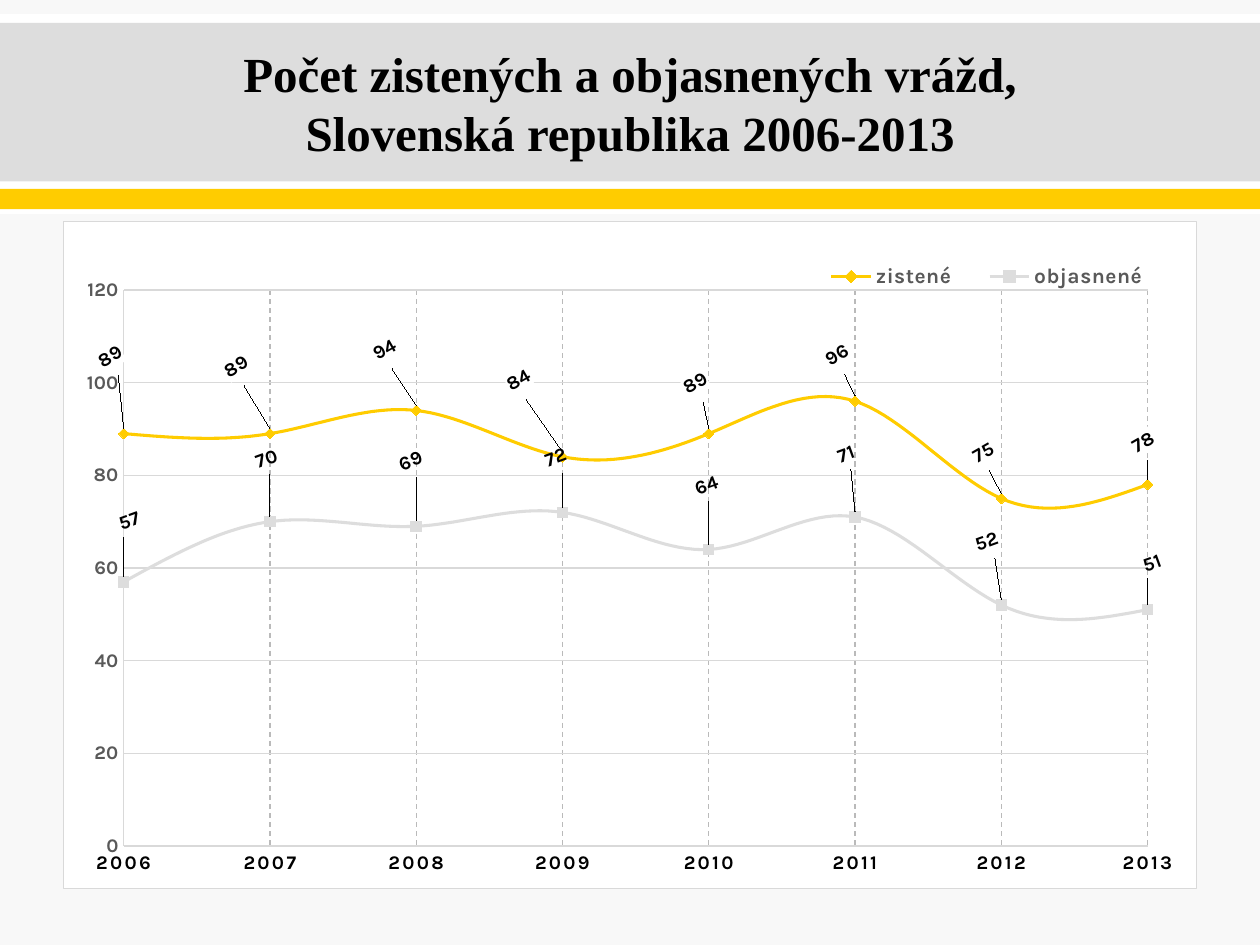
from lxml.etree import SubElement
from pptx import Presentation
from pptx.chart.data import CategoryChartData as Data
from pptx.dml.color import RGBColor
from pptx.enum.chart import XL_CHART_TYPE as Kind, XL_LABEL_POSITION as Place
from pptx.enum.chart import XL_LEGEND_POSITION as Side, XL_MARKER_STYLE as Mark
from pptx.enum.chart import XL_TICK_MARK as Tick
from pptx.enum.dml import MSO_LINE as Dash
from pptx.enum.shapes import MSO_SHAPE as Form
from pptx.enum.text import MSO_ANCHOR as Anchor, PP_ALIGN as Align
from pptx.oxml import parse_xml
from pptx.oxml.ns import nsdecls, qn
from pptx.util import Cm, Pt

BLACK = RGBColor(0x00, 0x00, 0x00)
WHITE = RGBColor(0xFF, 0xFF, 0xFF)
PAPER = RGBColor(0xF8, 0xF8, 0xF8)
SILVER = RGBColor(0xDD, 0xDD, 0xDD)
GOLD = RGBColor(0xFF, 0xCC, 0x00)
TEXT = RGBColor(0x59, 0x59, 0x59)
RULE = RGBColor(0xD9, 0xD9, 0xD9)
GRID = RGBColor(0xBA, 0xBA, 0xBA)

YEARS = [str(year) for year in range(2006, 2014)]
# name, values, colour, marker, label angle, label shifts in % of the chart
LINES = [
    ("zistené", (89, 89, 94, 84, 89, 96, 75, 78), GOLD, Mark.DIAMOND, -30,
     [(-1.2, -7.6), (-3, -6.1), (-2.8, -5.2), (-3.9, -7.5),
      (-1.2, -3.6), (-1.6, -3), (-1.6, -3.1), (-0.4, -2.5)]),
    ("objasnené", (57, 70, 69, 72, 64, 71, 52, 51), SILVER, Mark.SQUARE, -20,
     [(0.5, -5.4), (-0.3, -5.7), (-0.5, -6), (-0.6, -4.5),
      (-0.2, -5.8), (-0.8, -5.8), (-1.3, -5.7), (0.4, -3.3)]),
]


def style(font, size=11, color=BLACK, name="Karla"):
    font.size, font.bold, font.name = Pt(size), True, name
    font.color.rgb = color


def stroke(line, color, width=0.75, dash=None):
    line.color.rgb = color
    line.width = Pt(width)
    if dash:
        line.dash_style = dash


def band(slide, top, height, color):
    """Add a stripe across the full slide width."""
    bar = slide.shapes.add_shape(Form.RECTANGLE, 0, Cm(top), Cm(25.4), Cm(height))
    bar.shadow.inherit = False
    bar.fill.solid()
    bar.fill.fore_color.rgb = color
    bar.line.fill.background()


def write(slide, text, left, top, width, height, **look):
    box = slide.shapes.add_textbox(Cm(left), Cm(top), Cm(width), Cm(height))
    frame = box.text_frame
    frame.word_wrap = True
    frame.vertical_anchor = Anchor.MIDDLE
    para = frame.paragraphs[0]
    para.text = text
    para.alignment = Align.CENTER
    for run in para.runs:
        style(run.font, **look)


def layout(x, y, w=None, h=None, inner=False):
    """Make a manual layout from fractions of the chart."""
    node = parse_xml(f"<c:layout {nsdecls('c')}><c:manualLayout/></c:layout>")
    parts = {"x": x, "y": y}
    if w:
        parts = {"xMode": "edge", "yMode": "edge", **parts, "w": w, "h": h}
    if inner:
        parts = {"layoutTarget": "inner", **parts}
    for tag, val in parts.items():
        SubElement(node[0], qn(f"c:{tag}")).set("val", str(val))
    return node


def solid(line=None):
    """Make a white fill with an optional thin border."""
    fill = f'<a:solidFill><a:srgbClr val="{WHITE}"/></a:solidFill>'
    edge = (f'<a:ln w="{Pt(0.75)}"><a:solidFill><a:srgbClr val="{line}"/>'
            "</a:solidFill></a:ln>") if line else ""
    return parse_xml(f"<c:spPr {nsdecls('c', 'a')}>{fill}{edge}</c:spPr>")


def tag_points(row, angle, shifts, filled):
    """Turn and shift the value label of each point."""
    for i, (x, y) in enumerate(shifts):
        label = row.points[i].data_label
        style(label.font)
        label.position = Place.ABOVE
        node = row._element.xpath(f"c:dLbls/c:dLbl[c:idx/@val='{i}']")[0]
        node.insert(1, layout(round(x / 100, 4), round(y / 100, 4)))
        props = node.find(qn("c:txPr"))
        props.find(qn("a:bodyPr")).set("rot", str(angle * 60000))
        if filled:
            for old in node.findall(qn("c:spPr")):
                node.remove(old)
            props.addprevious(solid())


def trace(row, color, mark):
    row.smooth = True
    stroke(row.format.line, color, 1.75)
    row.marker.style, row.marker.size = mark, 6
    look = row.marker.format
    look.fill.solid()
    look.fill.fore_color.rgb = color
    stroke(look.line, color)


def set_axis(axis, color, grid, dash=None):
    style(axis.tick_labels.font, color=color)
    axis.major_tick_mark = axis.minor_tick_mark = Tick.NONE
    stroke(axis.format.line, RULE)
    axis.has_major_gridlines = True
    stroke(axis.major_gridlines.format.line, grid, dash=dash)


def space(part, gap):
    """Widen the letter spacing of a chart part, in points."""
    for node in part._element.iter(qn("a:defRPr")):
        node.set("spc", str(round(gap * 100)))


def add_graph(slide):
    data = Data()
    data.categories = YEARS
    for name, vals, *_ in LINES:
        data.add_series(name, vals)
    chart = slide.shapes.add_chart(Kind.LINE_MARKERS, Cm(1.27), Cm(4.45),
                                   Cm(22.86), Cm(13.48), data).chart
    chart.has_title = False
    style(chart.font)
    root = chart._chartSpace
    root.find(qn("c:txPr")).addprevious(solid(RULE))

    set_axis(chart.category_axis, BLACK, GRID, Dash.DASH)
    space(chart.category_axis, 1.2)
    scale = chart.value_axis
    set_axis(scale, TEXT, RULE)
    scale.minimum_scale, scale.maximum_scale, scale.major_unit = 0, 120, 20
    cross = parse_xml(f'<c:crossBetween {nsdecls("c")} val="midCat"/>')
    scale._element.find(qn("c:majorUnit")).addprevious(cross)

    chart.has_legend = True
    key = chart.legend
    key.position, key.include_in_layout = Side.TOP, False
    style(key.font, size=12, color=TEXT)
    space(key, 0.3)
    spots = [(key._element, 1, layout(0.65, 0.06, 0.33, 0.045)),
             (root.find(qn("c:chart")).find(qn("c:plotArea")), 0,
              layout(0.053, 0.103, 0.904, 0.833, True))]
    for node, place, spot in spots:
        for old in node.findall(qn("c:layout")):
            node.remove(old)
        node.insert(place, spot)

    plot = chart.plots[0]
    plot.vary_by_categories = False
    for row, (_, _, color, mark, angle, shifts) in zip(plot.series, LINES):
        trace(row, color, mark)
        row.data_labels.show_value = True
        style(row.data_labels.font)
        tag_points(row, angle, shifts, color == GOLD)


def main():
    deck = Presentation()
    deck.slide_width, deck.slide_height = Cm(25.4), Cm(19.05)
    slide = deck.slides.add_slide(deck.slide_layouts[6])
    slide.background.fill.solid()
    slide.background.fill.fore_color.rgb = PAPER
    for top, height, color in [(0.28, 4.04, WHITE), (0.46, 3.2, SILVER),
                               (3.81, 0.41, GOLD)]:
        band(slide, top, height, color)
    write(slide, "Počet zistených a objasnených vrážd,\nSlovenská republika 2006-2013",
          1.27, 0.51, 22.86, 3.1, size=28, name="Times New Roman")
    add_graph(slide)
    deck.save("out.pptx")


if __name__ == "__main__":
    main()
